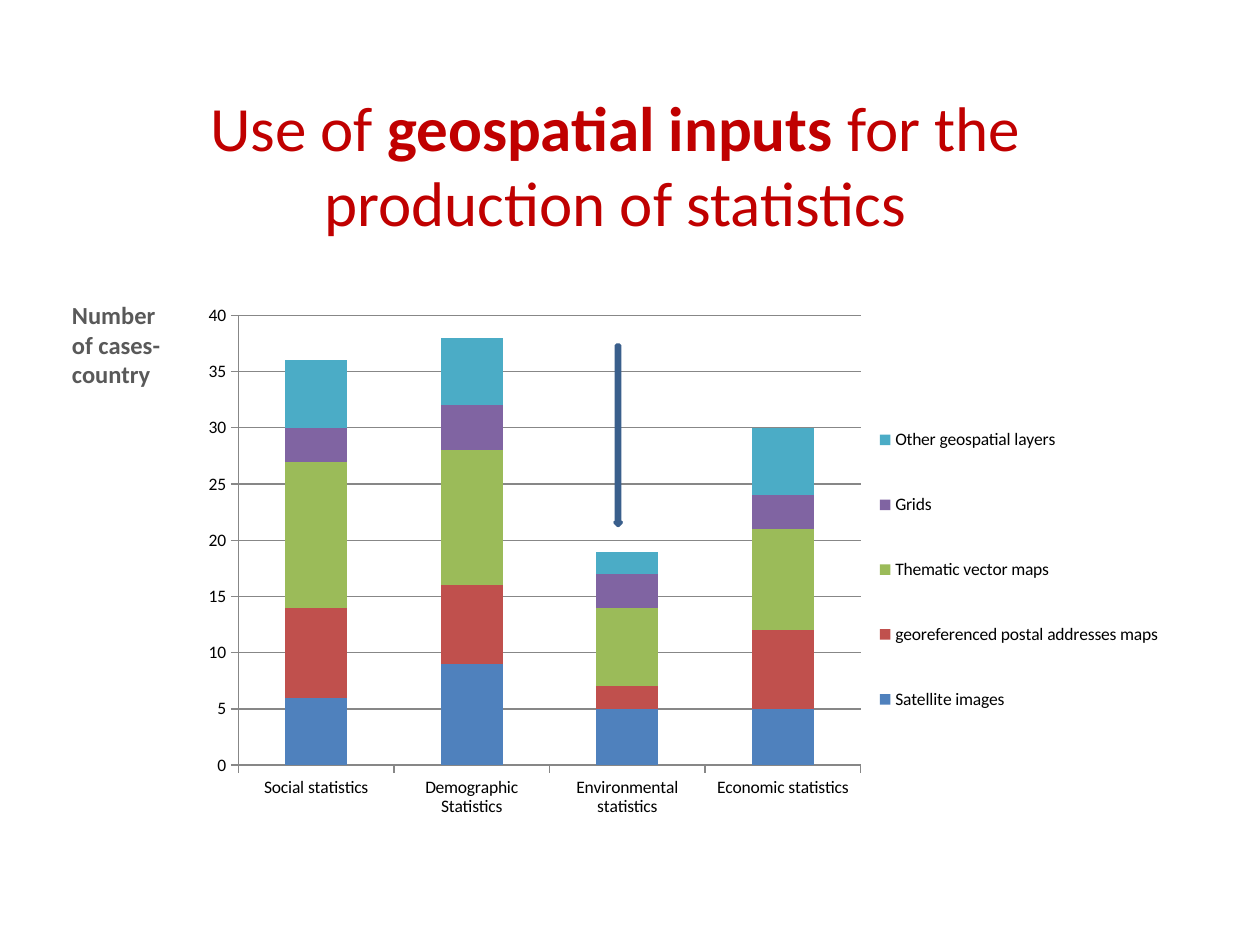
from dataclasses import dataclass

from pptx import Presentation
from pptx.chart.data import CategoryChartData
from pptx.dml.color import RGBColor
from pptx.enum.chart import XL_CHART_TYPE, XL_LEGEND_POSITION, XL_TICK_MARK
from pptx.enum.shapes import MSO_SHAPE
from pptx.enum.text import MSO_AUTO_SIZE, PP_ALIGN
from pptx.oxml import parse_xml
from pptx.oxml.ns import nsdecls
from pptx.util import Pt


@dataclass(frozen=True)
class Theme:
    font: str = "Calibri"
    title_size: int = 36
    label_size: int = 14
    chart_size: int = 10
    title: str = "C00000"
    label: str = "595959"
    chart_text: str = "000000"
    axis: str = "878787"
    arrow_fill: str = "4F81BD"
    arrow_line: str = "3A5F8C"
    series: tuple = ("4F81BD", "C0504D", "9BBB59", "8064A2", "4BACC6")


THEME = Theme()

CATEGORIES = (
    "Social statistics",
    "Demographic Statistics",
    "Environmental statistics",
    "Economic statistics",
)
INPUTS = {
    "Satellite images": (6, 9, 5, 5),
    "georeferenced postal addresses maps": (8, 7, 2, 7),
    "Thematic vector maps": (13, 12, 7, 9),
    "Grids": (3, 4, 3, 3),
    "Other geospatial layers": (6, 6, 2, 6),
}


def rgb(color):
    return RGBColor.from_string(color)


def box(*lengths):
    return [Pt(n) for n in lengths]


def style_font(font, size, color, bold=False):
    font.name = THEME.font
    font.size = Pt(size)
    font.bold = bold
    font.color.rgb = rgb(color)


def add_text(s, place, runs, size, color, align=PP_ALIGN.LEFT):
    tf = s.shapes.add_textbox(*box(*place)).text_frame
    tf.word_wrap = True
    tf.auto_size = MSO_AUTO_SIZE.SHAPE_TO_FIT_TEXT
    p = tf.paragraphs[0]
    p.alignment = align
    for text, bold in runs:
        r = p.add_run()
        r.text = text
        style_font(r.font, size, color, bold)


def set_layout(parent, index, x, y, w, h, target=""):
    for old in parent.xpath("c:layout"):
        parent.remove(old)
    parent.insert(index, parse_xml(
        f'<c:layout {nsdecls("c")}><c:manualLayout>{target}'
        '<c:xMode val="edge"/><c:yMode val="edge"/>'
        f'<c:x val="{x}"/><c:y val="{y}"/><c:w val="{w}"/><c:h val="{h}"/>'
        '</c:manualLayout></c:layout>'))


def style_axis(axis):
    axis.major_tick_mark = XL_TICK_MARK.OUTSIDE
    axis.minor_tick_mark = XL_TICK_MARK.NONE
    axis.format.line.color.rgb = rgb(THEME.axis)
    axis.format.line.width = Pt(0.75)


def add_stacked_chart(s, place):
    data = CategoryChartData()
    data.categories = CATEGORIES
    for name, values in INPUTS.items():
        data.add_series(name, values)
    chart = s.shapes.add_chart(
        XL_CHART_TYPE.COLUMN_STACKED, *box(*place), data).chart
    chart.has_title = False
    style_font(chart.font, THEME.chart_size, THEME.chart_text)

    plot = chart.plots[0]
    plot.gap_width = 150
    plot.overlap = 100
    plot.vary_by_categories = False
    for series, color in zip(plot.series, THEME.series):
        series.format.fill.solid()
        series.format.fill.fore_color.rgb = rgb(color)

    style_axis(chart.category_axis)
    values = chart.value_axis
    style_axis(values)
    values.minimum_scale = 0
    values.maximum_scale = 40
    values.major_unit = 5
    values.has_major_gridlines = True
    grid = values.major_gridlines.format.line
    grid.color.rgb = rgb(THEME.axis)
    grid.width = Pt(0.75)

    chart.has_legend = True
    chart.legend.position = XL_LEGEND_POSITION.RIGHT
    chart.legend.include_in_layout = False
    plot_area = chart.element.xpath("c:chart/c:plotArea")[0]
    legend = chart.element.xpath("c:chart/c:legend")[0]
    set_layout(plot_area, 0, 0.05, 0.04, 0.63, 0.84,
               '<c:layoutTarget val="inner"/>')
    set_layout(legend, 1, 0.69, 0.17, 0.3, 0.69)


def add_down_arrow(s, place):
    sp = s.shapes.add_shape(MSO_SHAPE.DOWN_ARROW, *box(*place))
    sp.shadow.inherit = False
    sp.fill.solid()
    sp.fill.fore_color.rgb = rgb(THEME.arrow_fill)
    sp.line.color.rgb = rgb(THEME.arrow_line)
    sp.line.width = Pt(2)


def main():
    prs = Presentation()
    prs.slide_width, prs.slide_height = box(720, 540)
    s = prs.slides.add_slide(prs.slide_layouts[6])
    add_text(s, (34, 168, 73.5, 58), [("Number of cases-country", True)],
             THEME.label_size, THEME.label)
    add_text(s, (31, 47, 641, 94),
             [("Use of ", False), ("geospatial inputs ", True),
              ("for the production of statistics", False)],
             THEME.title_size, THEME.title, PP_ALIGN.CENTER)
    add_stacked_chart(s, (108, 168, 564.5, 306))
    add_down_arrow(s, (351.4, 197.3, 3.6, 103))
    prs.save("out.pptx")


if __name__ == "__main__":
    main()
